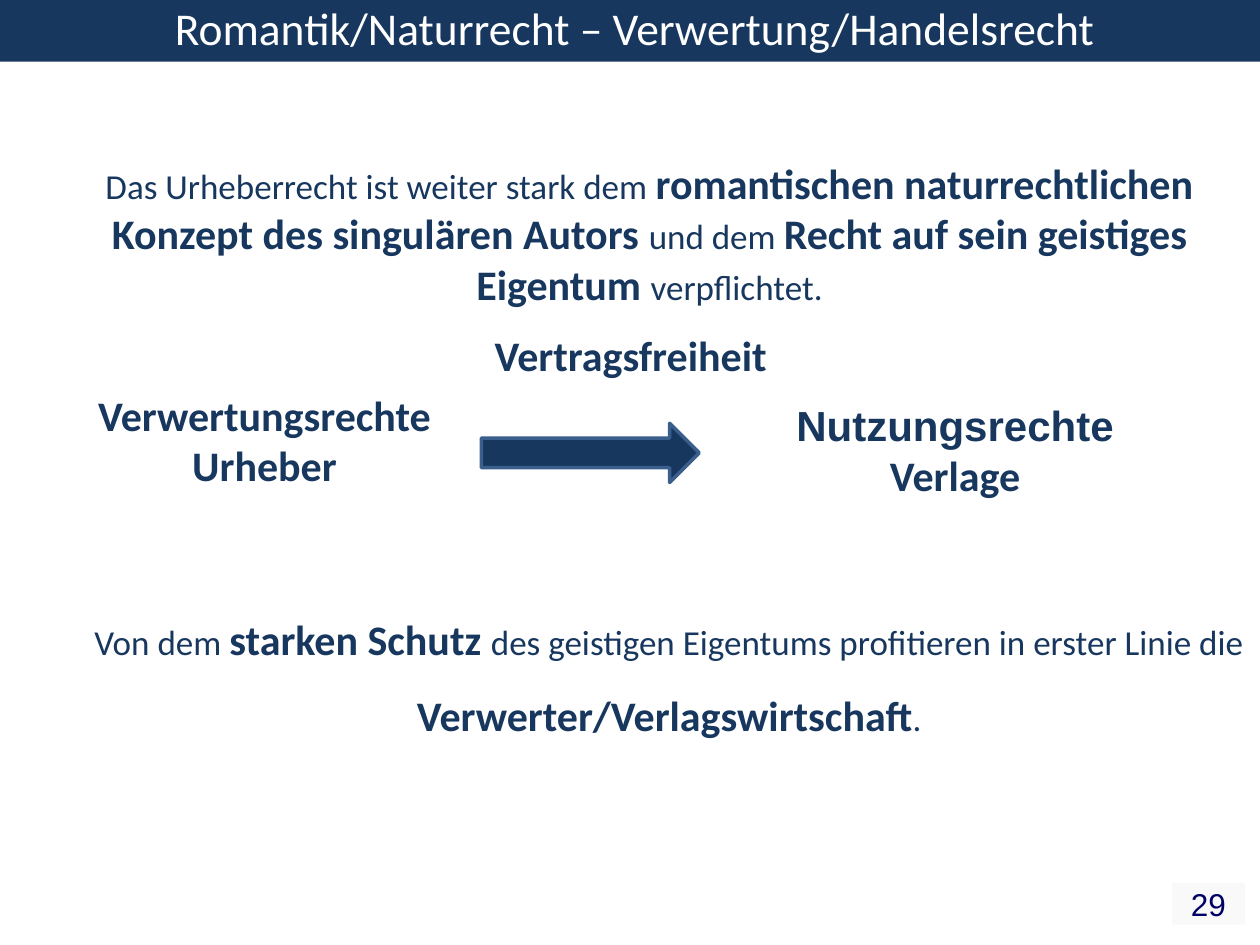
"""Build the slide on copyright between natural law and commercial law."""
from dataclasses import dataclass

from pptx import Presentation
from pptx.dml.color import RGBColor
from pptx.enum.shapes import MSO_SHAPE
from pptx.enum.text import MSO_ANCHOR, MSO_AUTO_SIZE, PP_ALIGN
from pptx.util import Inches, Pt

RECTANGLE, RIGHT_ARROW = MSO_SHAPE.RECTANGLE, MSO_SHAPE.RIGHT_ARROW
CENTER = PP_ALIGN.CENTER
TOP, MIDDLE = MSO_ANCHOR.TOP, MSO_ANCHOR.MIDDLE
NO_AUTOFIT = MSO_AUTO_SIZE.NONE
TITLE_ONLY_LAYOUT = 5


@dataclass(frozen=True)
class Theme:
    navy: RGBColor = RGBColor.from_string("17375E")
    arrow_edge: RGBColor = RGBColor.from_string("3A5F8C")
    white: RGBColor = RGBColor.from_string("FFFFFF")
    number_fill: RGBColor = RGBColor.from_string("F9F9F9")
    number_text: RGBColor = RGBColor.from_string("000066")
    body_font: str = "Calibri"
    accent_font: str = "Arial"
    title_size: float = 26
    strong_size: float = 24
    body_size: float = 20
    number_size: float = 18


THEME = Theme()


@dataclass(frozen=True)
class Box:
    left: float
    top: float
    width: float
    height: float

    def lengths(self) -> tuple:
        return tuple(Inches(value) for value in (self.left, self.top, self.width, self.height))


@dataclass(frozen=True)
class Run:
    text: str
    size: float = THEME.body_size
    bold: bool = False
    name: str = THEME.body_font
    color: RGBColor = THEME.navy


@dataclass(frozen=True)
class TextBlock:
    box: Box
    paragraphs: list[list[Run]]
    line_spacing: float = 1.0


def strong(text: str, name: str = THEME.body_font) -> Run:
    return Run(text, THEME.strong_size, True, name)


TITLE = TextBlock(
    Box(0, 0, 10, 0.49),
    [[Run(" Romantik/Naturrecht – Verwertung/Handelsrecht", THEME.title_size, color=THEME.white)]],
    0.9,
)
PAGE_NUMBER = TextBlock(
    Box(9.3, 7.01, 0.58, 0.33),
    [[Run("29", THEME.number_size, name=THEME.accent_font, color=THEME.number_text)]],
)
ARROW_BOX = Box(3.82, 3.36, 1.73, 0.47)
TEXT_BLOCKS = [
    TextBlock(Box(0.39, 1.2, 9.53, 1.31), [[
        Run("Das Urheberrecht ist weiter stark dem "),
        strong("romantischen naturrechtlichen Konzept des singulären Autors "),
        Run("und dem "),
        strong("Recht auf sein geistiges Eigentum "),
        Run("verpflichtet."),
    ]]),
    TextBlock(Box(3.43, 2.57, 3.15, 0.5), [[strong("Vertragsfreiheit")]]),
    TextBlock(Box(0.62, 3.04, 2.96, 0.91), [[strong("Verwertungsrechte")], [strong("Urheber")]]),
    TextBlock(
        Box(6.1, 3.12, 2.96, 0.91),
        [[strong("Nutzungsrechte", THEME.accent_font)], [strong("Verlage")]],
    ),
    TextBlock(Box(0.62, 4.62, 9.38, 1.31), [[
        Run("Von dem "),
        strong("starken Schutz "),
        Run("des geistigen Eigentums profitieren in erster Linie die "),
        strong("Verwerter/Verlagswirtschaft"),
        Run("."),
    ]], 1.5),
]


def set_attributes(target, values: dict) -> None:
    for attribute, value in values.items():
        setattr(target, attribute, value)


def fill_shape(shape, color: RGBColor) -> None:
    shape.fill.solid()
    shape.fill.fore_color.rgb = color


def write_text(shape, block: TextBlock, anchor=TOP, wrap: bool = True) -> None:
    frame = shape.text_frame
    set_attributes(frame, {
        "word_wrap": wrap, "auto_size": NO_AUTOFIT, "vertical_anchor": anchor,
    })
    for index, runs in enumerate(block.paragraphs):
        paragraph = frame.add_paragraph() if index else frame.paragraphs[0]
        set_attributes(paragraph, {"alignment": CENTER, "line_spacing": block.line_spacing})
        for item in runs:
            run = paragraph.add_run()
            run.text = item.text
            set_attributes(run.font, {"name": item.name, "size": Pt(item.size), "bold": item.bold})
            run.font.color.rgb = item.color


def add_filled_shape(slide, kind, box: Box, color: RGBColor):
    shape = slide.shapes.add_shape(kind, *box.lengths())
    shape.shadow.inherit = False
    fill_shape(shape, color)
    shape.line.fill.background()
    return shape


def add_title(slide) -> None:
    title = slide.shapes.title
    left, top, width, height = TITLE.box.lengths()
    set_attributes(title, {"left": left, "top": top, "width": width, "height": height})
    fill_shape(title, THEME.navy)
    write_text(title, TITLE)


def add_arrow(slide) -> None:
    arrow = add_filled_shape(slide, RIGHT_ARROW, ARROW_BOX, THEME.navy)
    arrow.line.color.rgb = THEME.arrow_edge
    arrow.line.width = Pt(2)


def main() -> None:
    presentation = Presentation()
    set_attributes(presentation, {"slide_width": Inches(10), "slide_height": Inches(7.5)})
    slide = presentation.slides.add_slide(presentation.slide_layouts[TITLE_ONLY_LAYOUT])
    add_title(slide)
    number = add_filled_shape(slide, RECTANGLE, PAGE_NUMBER.box, THEME.number_fill)
    write_text(number, PAGE_NUMBER, MIDDLE, wrap=False)
    for block in TEXT_BLOCKS:
        write_text(slide.shapes.add_textbox(*block.box.lengths()), block)
    add_arrow(slide)
    presentation.save("out.pptx")


if __name__ == "__main__":
    main()
